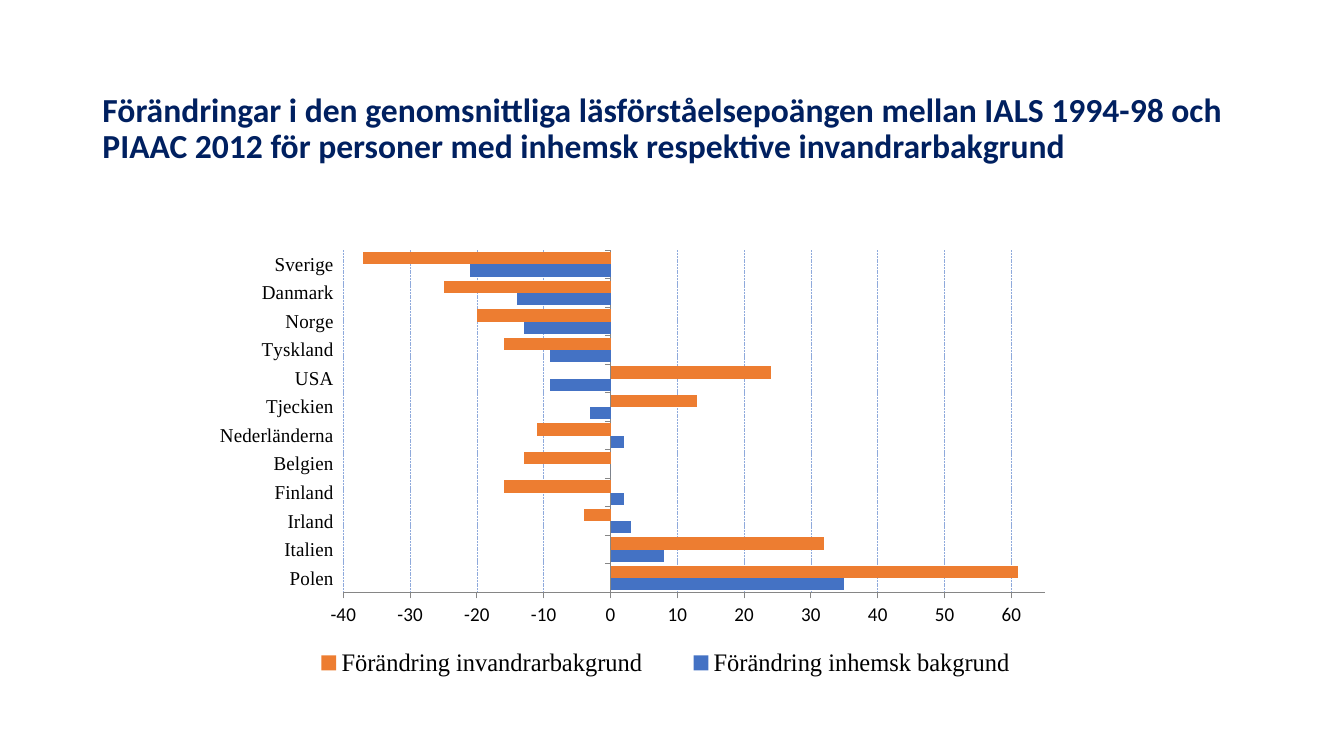
from pptx import Presentation
from pptx import util as u
from pptx.chart import data as cd
from pptx.dml import color as dml
from pptx.enum import chart as ch, dml as line, text
from pptx.oxml import parse_xml
from pptx.oxml.ns import nsdecls

Pt = u.Pt
HUES = {"title": "002060", "ink": "000000", "axis": "868686", "grid": "8FAADC",
        "native": "4472C4", "migrant": "ED7D31"}
SANS, SERIF = "Calibri", "Times New Roman"
TITLE = ("Förändringar i den genomsnittliga läsförståelsepoängen mellan IALS 1994-98 "
         "och PIAAC 2012 för personer med inhemsk respektive invandrarbakgrund")
LANDS = ["Polen", "Irland", "Finland"]
# Country: change for native background, change for migrant background
ROWS = [("Polen", 35, 61), ("Italien", 8, 32), ("Irland", 3, -4),
        ("Finland", 2, -16), ("Belgien", 0, -13), ("Nederländerna", 2, -11),
        ("Tjeckien", -3, 13), ("USA", -9, 24), ("Tyskland", -9, -16),
        ("Norge", -13, -20), ("Danmark", -14, -25), ("Sverige", -21, -37)]
LANDS, NATIVE, MIGRANT = zip(*ROWS)


def hue(name):
    return dml.RGBColor.from_string(HUES[name])


def style(font, face, size, name="ink", bold=False):
    font.name, font.size, font.bold = face, Pt(size), bold
    font.color.rgb = hue(name)


def place(part, box, inner=False):
    """Set a manual layout, as fractions of the chart."""
    target = '<c:layoutTarget val="inner"/>' if inner else ""
    modes = "".join(f'<c:{k}Mode val="edge"/>' for k in "xy")
    sizes = "".join(f'<c:{k} val="{v}"/>' for k, v in zip("xywh", box))
    for old in part.findall("{*}layout"):
        part.remove(old)
    node = parse_xml(f'<c:layout {nsdecls("c")}><c:manualLayout>{target}{modes}'
                     f'{sizes}</c:manualLayout></c:layout>')
    part.insert(0 if inner else 1, node)


def add_title(slide, box):
    shape = slide.shapes.title
    shape.left, shape.top, shape.width, shape.height = map(Pt, box)
    frame = shape.text_frame
    frame.word_wrap = True
    frame.auto_size = text.MSO_AUTO_SIZE.NONE
    frame.vertical_anchor = text.MSO_ANCHOR.MIDDLE
    frame.margin_top = Pt(27)
    para = frame.paragraphs[0]
    para.alignment = text.PP_ALIGN.LEFT
    para.line_spacing = 0.9
    run = para.add_run()
    run.text = TITLE
    style(run.font, SANS, 24, "title", True)


def add_bars(slide, box):
    data = cd.CategoryChartData()
    data.categories = LANDS
    data.add_series("Förändring inhemsk bakgrund", NATIVE)
    data.add_series("Förändring invandrarbakgrund", MIGRANT)
    chart = slide.shapes.add_chart(ch.XL_CHART_TYPE.BAR_CLUSTERED,
                                   *map(Pt, box), data).chart
    style(chart.font, SANS, 10)
    chart.has_title = False

    # Bars
    plot = chart.plots[0]
    plot.gap_width, plot.overlap, plot.vary_by_categories = 33, 0, False
    for bars, name in zip(plot.series, ("native", "migrant")):
        bars.invert_if_negative = False
        bars.format.fill.solid()
        bars.format.fill.fore_color.rgb = hue(name)

    # Axes and grid
    cat, val = chart.category_axis, chart.value_axis
    for axis, face in ((cat, SERIF), (val, SANS)):
        style(axis.tick_labels.font, face, 14)
        axis.major_tick_mark = ch.XL_TICK_MARK.OUTSIDE
        axis.format.line.color.rgb = hue("axis")
        axis.format.line.width = Pt(0.75)
    cat.tick_label_position = ch.XL_TICK_LABEL_POSITION.LOW
    val.minimum_scale, val.maximum_scale, val.major_unit = -40, 65, 10
    val.has_major_gridlines = True
    grid = val.major_gridlines.format.line
    grid.color.rgb = hue("grid")
    grid.width = Pt(0.5)
    grid.dash_style = line.MSO_LINE.SQUARE_DOT

    # Legend in one row below the plot
    chart.has_legend = True
    legend = chart.legend
    legend.position = ch.XL_LEGEND_POSITION.RIGHT
    legend.include_in_layout = False
    style(legend.font, SERIF, 18)
    place(legend._element, (0.04, 0.88, 0.95, 0.1))
    place(plot._element.getparent(), (0.12, 0.05, 0.86, 0.73), True)


def main():
    deck = Presentation()
    deck.slide_width, deck.slide_height = Pt(960), Pt(540)
    slide = deck.slides.add_slide(deck.slide_layouts[5])
    add_title(slide, (66, 29, 828, 104))
    add_bars(slide, (157, 162, 601, 335))
    deck.save("out.pptx")


if __name__ == "__main__":
    main()
